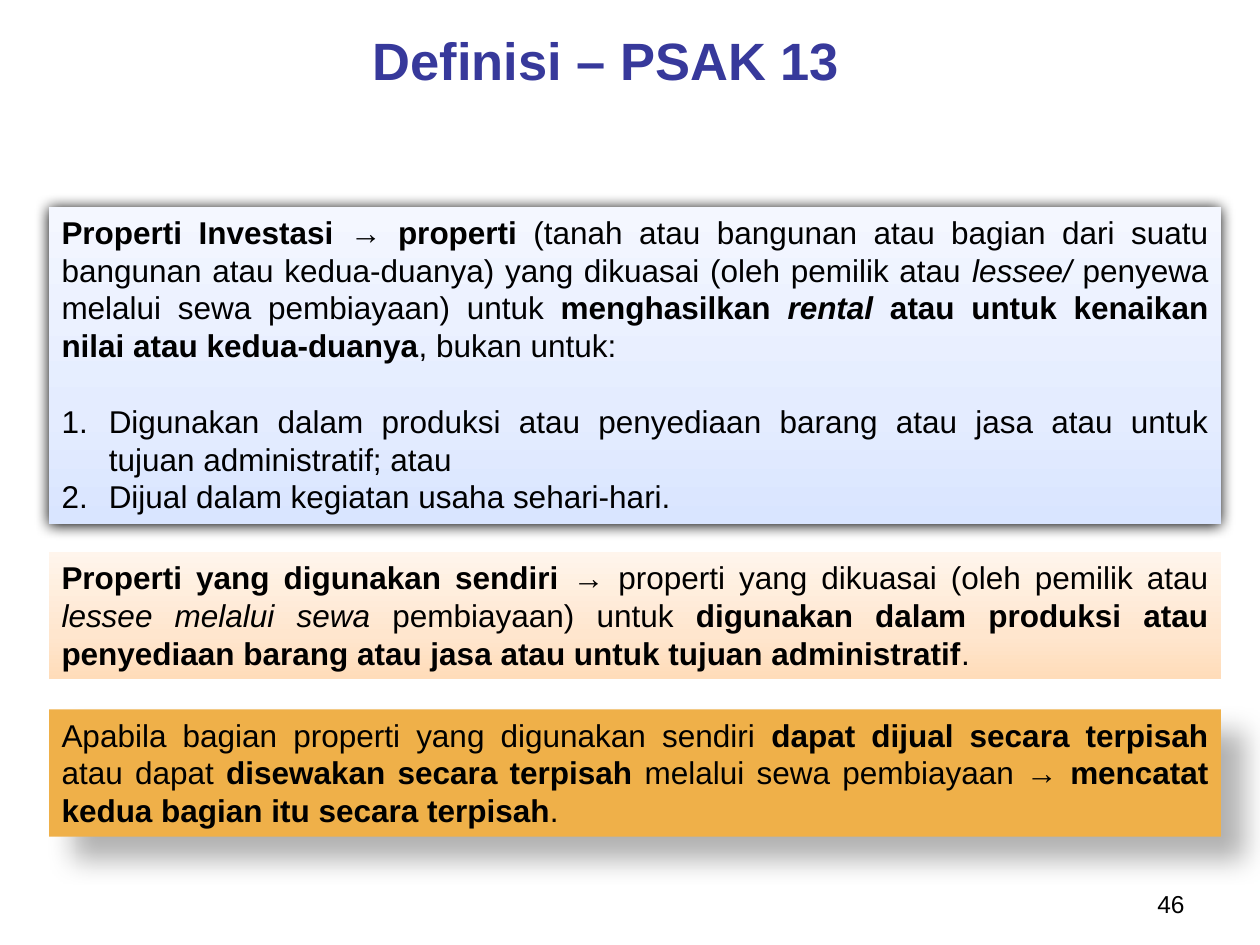
"""Build the slide that defines investment property under PSAK 13."""
import copy

import pptx
import pptx.dml.color
import pptx.enum.shapes
import pptx.enum.text
import pptx.oxml
import pptx.oxml.ns
import pptx.util

Pt = pptx.util.Pt
Align = pptx.enum.text.PP_ALIGN
Anchor = pptx.enum.text.MSO_ANCHOR
NS = 'xmlns:a="http://schemas.openxmlformats.org/drawingml/2006/main"'


def color(value):
    return pptx.dml.color.RGBColor.from_string(value)


class DefinitionSlide:
    font_name = "Arial"
    ink = "000000"
    body_size = 18
    line_height = 21.6
    left, width = 28.08, 669.6
    number_indent = 27

    def __init__(self, presentation):
        self.slide = presentation.slides.add_slide(presentation.slide_layouts[5])

    def style(self, paragraph, size, align, ink=None, bold=None):
        paragraph.alignment = align
        font = paragraph.font
        font.name, font.size, font.bold = self.font_name, Pt(size), bold
        font.color.rgb = color(ink or self.ink)

    def title(self, text, left, top, width, height):
        heading = self.slide.shapes.title
        heading.left, heading.top = Pt(left), Pt(top)
        heading.width, heading.height = Pt(width), Pt(height)
        frame = heading.text_frame
        frame.text = text
        frame.auto_size = pptx.enum.text.MSO_AUTO_SIZE.NONE
        frame.vertical_anchor = Anchor.MIDDLE
        self.style(frame.paragraphs[0], 30, Align.CENTER, "37399B", True)

    def page_number(self, text, left, top, width, height):
        box = self.slide.shapes.add_textbox(Pt(left), Pt(top), Pt(width), Pt(height))
        frame = box.text_frame
        frame.word_wrap = True
        frame.vertical_anchor = Anchor.MIDDLE
        frame.text = text
        self.style(frame.paragraphs[0], 14, Align.RIGHT)

    def panel(self, top, height, runs, fill, shadow=None, items=()):
        box = self.slide.shapes.add_shape(
            pptx.enum.shapes.MSO_SHAPE.RECTANGLE,
            Pt(self.left), Pt(top), Pt(self.width), Pt(height))
        box.line.fill.background()
        self.paint(box, fill)
        box.shadow.inherit = False
        if shadow:
            self.cast_shadow(box, *shadow)
        frame = box.text_frame
        frame.word_wrap = True
        frame.vertical_anchor = Anchor.TOP
        self.passage(frame.paragraphs[0], runs)
        for index, item in enumerate(items):
            paragraph = frame.add_paragraph()
            self.number(paragraph)
            self.passage(paragraph, [(item, "")])
            paragraph.space_before = Pt(0 if index else self.line_height)

    def passage(self, paragraph, runs):
        self.style(paragraph, self.body_size, Align.JUSTIFY)
        paragraph.line_spacing = Pt(self.line_height)
        for text, marks in runs:
            run = paragraph.add_run()
            run.text = text
            if "b" in marks:
                run.font.bold = True
            if "i" in marks:
                run.font.italic = True

    def number(self, paragraph):
        properties = paragraph._p.get_or_add_pPr()
        properties.set("marL", str(Pt(self.number_indent)))
        properties.set("indent", str(-Pt(self.number_indent)))
        properties.append(pptx.oxml.parse_xml(f'<a:buAutoNum {NS} type="arabicPeriod"/>'))

    def paint(self, box, fill):
        if isinstance(fill, str):
            box.fill.solid()
            box.fill.fore_color.rgb = color(fill)
            return
        box.fill.gradient()
        box.fill.gradient_angle = 90
        stop_list = box._element.spPr.find(".//" + pptx.oxml.ns.qn("a:gsLst"))
        stop_list.append(copy.deepcopy(stop_list[0]))
        for stop, position, value in zip(box.fill.gradient_stops, (0, 0.35, 1), fill):
            stop.position = position
            stop.color.rgb = color(value)

    def cast_shadow(self, box, opacity, blur, distance, angle):
        effects = box._element.spPr.find(pptx.oxml.ns.qn("a:effectLst"))
        effects.append(pptx.oxml.parse_xml(
            f'<a:outerShdw {NS} blurRad="{Pt(blur)}" dist="{Pt(distance)}" '
            f'dir="{angle * 60000}" algn="ctr" rotWithShape="0">'
            f'<a:srgbClr val="{self.ink}"><a:alpha val="{opacity * 1000}"/></a:srgbClr>'
            '</a:outerShdw>'))


def main():
    presentation = pptx.Presentation()
    presentation.slide_width, presentation.slide_height = Pt(720), Pt(540)
    page = DefinitionSlide(presentation)
    page.title("Definisi – PSAK 13", 22.32, 11.52, 648, 44.64)
    page.page_number("46", 516.24, 504, 167.76, 25.2)
    page.panel(
        118.08, 181.44,
        [("Properti Investasi ", "b"), ("→ ", ""), ("properti", "b"),
         (" (tanah atau bangunan atau bagian dari suatu bangunan atau kedua-duanya) "
          "yang dikuasai (oleh pemilik atau ", ""),
         ("lessee/ ", "i"), ("penyewa melalui sewa pembiayaan) untuk ", ""),
         ("menghasilkan ", "b"), ("rental ", "bi"),
         ("atau untuk kenaikan nilai atau kedua-duanya", "b"), (", bukan untuk:", "")],
        ("D9E5FF", "E4ECFF", "F4F7FF"), (100, 8.5, 1, 90),
        ["Digunakan dalam produksi atau penyediaan barang atau jasa atau untuk "
         "tujuan administratif; atau",
         "Dijual dalam kegiatan usaha sehari-hari."])
    page.panel(
        315.36, 72.72,
        [("Properti yang digunakan sendiri ", "b"),
         ("→ properti yang dikuasai (oleh pemilik atau ", ""),
         ("lessee melalui sewa ", "i"), ("pembiayaan) untuk ", ""),
         ("digunakan dalam produksi atau penyediaan barang atau jasa atau untuk "
          "tujuan administratif", "b"), (".", "")],
        ("FFDCB9", "FFE6CE", "FFF5EC"))
    page.panel(
        405.36, 72.72,
        [("Apabila bagian properti yang digunakan sendiri ", ""),
         ("dapat dijual secara terpisah ", "b"), ("atau dapat ", ""),
         ("disewakan secara terpisah ", "b"), ("melalui sewa pembiayaan → ", ""),
         ("mencatat kedua bagian itu secara terpisah", "b"), (".", "")],
        "EFB049", (30, 15, 18, 45))
    presentation.save("out.pptx")


if __name__ == "__main__":
    main()
